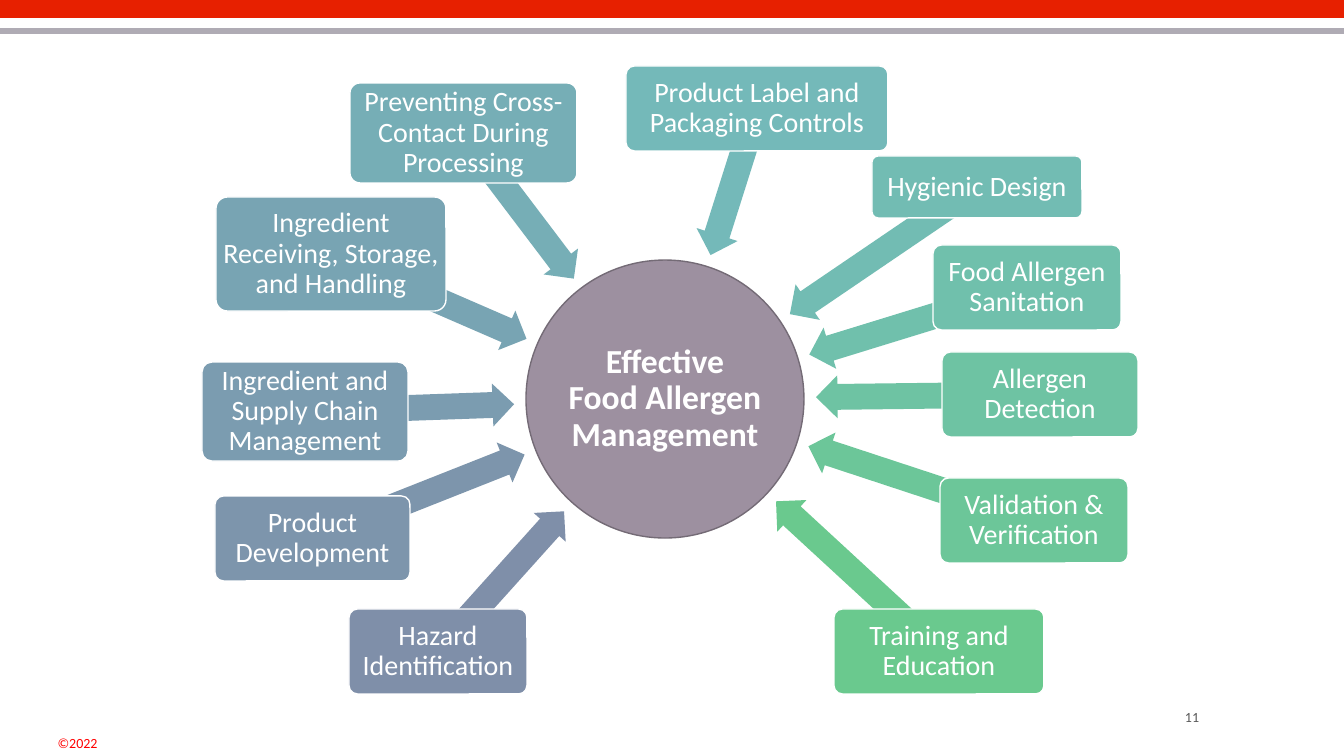
from math import atan2, cos, degrees, hypot, sin

from lxml.etree import SubElement
from pptx import Presentation
from pptx.dml.color import RGBColor
from pptx.enum.shapes import MSO_CONNECTOR as Connector, MSO_SHAPE as Shape
from pptx.enum.text import MSO_ANCHOR as Anchor, PP_ALIGN as Align
from pptx.oxml.ns import qn
from pptx.util import Emu, Pt

FONT = "Calibri"
WHITE = RGBColor(0xFF, 0xFF, 0xFF)
RED = RGBColor(0xE7, 0x20, 0x00)
FOOTER_RED = RGBColor(0xFF, 0x00, 0x00)
GRAY = RGBColor(0xAF, 0xAB, 0xB4)
DARK_GRAY = RGBColor(0x59, 0x59, 0x59)
MAUVE = RGBColor(0x9D, 0x90, 0xA0)
DARK_MAUVE = RGBColor(0x74, 0x6B, 0x76)

# Hub geometry and arrow sizes, in px
HUB_X, HUB_Y, HUB_RADIUS = 665, 399, 139
TIP_RADIUS = 151
ARROW_HEIGHT = 43

# Topics clockwise from lower left: text, left, top, width, height, colour
TOPICS = [
    ("Hazard Identification", 349, 609, 178, 85, RGBColor(0x7F, 0x8F, 0xA9)),
    ("Product Development", 215, 496, 195, 85, RGBColor(0x7D, 0x95, 0xAC)),
    ("Ingredient and Supply Chain Management", 202, 362, 206, 99,
     RGBColor(0x7B, 0x9C, 0xB0)),
    ("Ingredient Receiving, Storage, and Handling", 216, 197, 230, 114,
     RGBColor(0x78, 0xA4, 0xB3)),
    ("Preventing Cross-Contact During Processing", 350, 83, 227, 100,
     RGBColor(0x76, 0xAE, 0xB6)),
    ("Product Label and Packaging Controls", 626, 66, 262, 85,
     RGBColor(0x74, 0xB9, 0xB9)),
    ("Hygienic Design", 872, 156, 210, 62, RGBColor(0x72, 0xBC, 0xB3)),
    ("Food Allergen Sanitation", 933, 245, 188, 85, RGBColor(0x70, 0xC0, 0xAC)),
    ("Allergen Detection", 942, 352, 196, 85, RGBColor(0x6E, 0xC3, 0xA3)),
    ("Validation & Verification", 940, 478, 188, 85, RGBColor(0x6C, 0xC6, 0x99)),
    ("Training and Education", 834, 609, 210, 85, RGBColor(0x6A, 0xC9, 0x8E)),
]


def px(length):
    return Emu(round(length * 914400 / 100.8))


def write_text(shape, text, *, size, color, bold=False, align=Align.CENTER,
               spacing=None, inset=None):
    frame = shape.text_frame
    frame.word_wrap = True
    frame.vertical_anchor = Anchor.MIDDLE
    if inset is not None:
        frame.margin_left = frame.margin_right = px(inset)
        frame.margin_top = frame.margin_bottom = px(inset)
    paragraph = frame.paragraphs[0]
    paragraph.alignment = align
    paragraph.line_spacing = spacing
    run = paragraph.add_run()
    run.text = text
    run.font.name = FONT
    run.font.size = Pt(size)
    run.font.bold = bold
    run.font.color.rgb = color


def add_block(slide, kind, left, top, width, height, fill, line=None):
    shape = slide.shapes.add_shape(kind, px(left), px(top), px(width), px(height))
    shape.shadow.inherit = False
    shape.fill.solid()
    shape.fill.fore_color.rgb = fill
    if line is None:
        shape.line.fill.background()
    else:
        shape.line.color.rgb = line
        shape.line.width = Pt(1)
    return shape


def add_rule(slide, y, color, weight):
    rule = slide.shapes.add_connector(Connector.STRAIGHT, 0, px(y), px(1344), px(y))
    rule.line.color.rgb = color
    rule.line.width = Pt(weight)
    SubElement(rule._element.spPr, qn("a:effectLst"))


def add_label(slide, text, left, top, width, height, **text_format):
    box = slide.shapes.add_textbox(px(left), px(top), px(width), px(height))
    write_text(box, text, **text_format)


def add_arrow(slide, start_x, start_y, color):
    """Point an arrow from a topic's centre towards the hub."""
    away_x, away_y = start_x - HUB_X, start_y - HUB_Y
    angle = atan2(away_y, away_x)
    length = hypot(away_x, away_y) - TIP_RADIUS
    middle = TIP_RADIUS + length / 2
    left = HUB_X + middle * cos(angle) - length / 2
    top = HUB_Y + middle * sin(angle) - ARROW_HEIGHT / 2
    arrow = add_block(slide, Shape.LEFT_ARROW, left, top, length, ARROW_HEIGHT, color)
    arrow.adjustments[0] = 0.6
    arrow.adjustments[1] = 0.5
    arrow.rotation = degrees(angle) % 360


def add_topic(slide, text, left, top, width, height, color):
    add_arrow(slide, left + width / 2, top + height / 2, color)
    box = add_block(slide, Shape.ROUNDED_RECTANGLE, left, top, width, height,
                    color, WHITE)
    box.adjustments[0] = 0.1
    write_text(box, text, size=20, color=WHITE, spacing=0.9, inset=4)


def add_hub(slide, text):
    hub = add_block(slide, Shape.OVAL, HUB_X - HUB_RADIUS, HUB_Y - HUB_RADIUS,
                    2 * HUB_RADIUS, 2 * HUB_RADIUS, MAUVE, DARK_MAUVE)
    write_text(hub, text, size=24, color=WHITE, bold=True, spacing=0.9, inset=2)


def main():
    presentation = Presentation()
    presentation.slide_width, presentation.slide_height = px(1344), px(756)
    slide = presentation.slides.add_slide(presentation.slide_layouts[6])

    # Header rules
    add_rule(slide, 8, RED, 14.4)
    add_rule(slide, 31, GRAY, 4.2)

    # Hub and surrounding topics
    add_hub(slide, "Effective Food Allergen Management")
    for topic in TOPICS:
        add_topic(slide, *topic)

    # Footer
    add_label(slide, "©2022", 27, 729, 101, 27, size=10, color=FOOTER_RED)
    add_label(slide, "11", 1167, 696, 42, 41, size=10, color=DARK_GRAY,
              align=Align.RIGHT)

    presentation.save("out.pptx")


if __name__ == "__main__":
    main()
